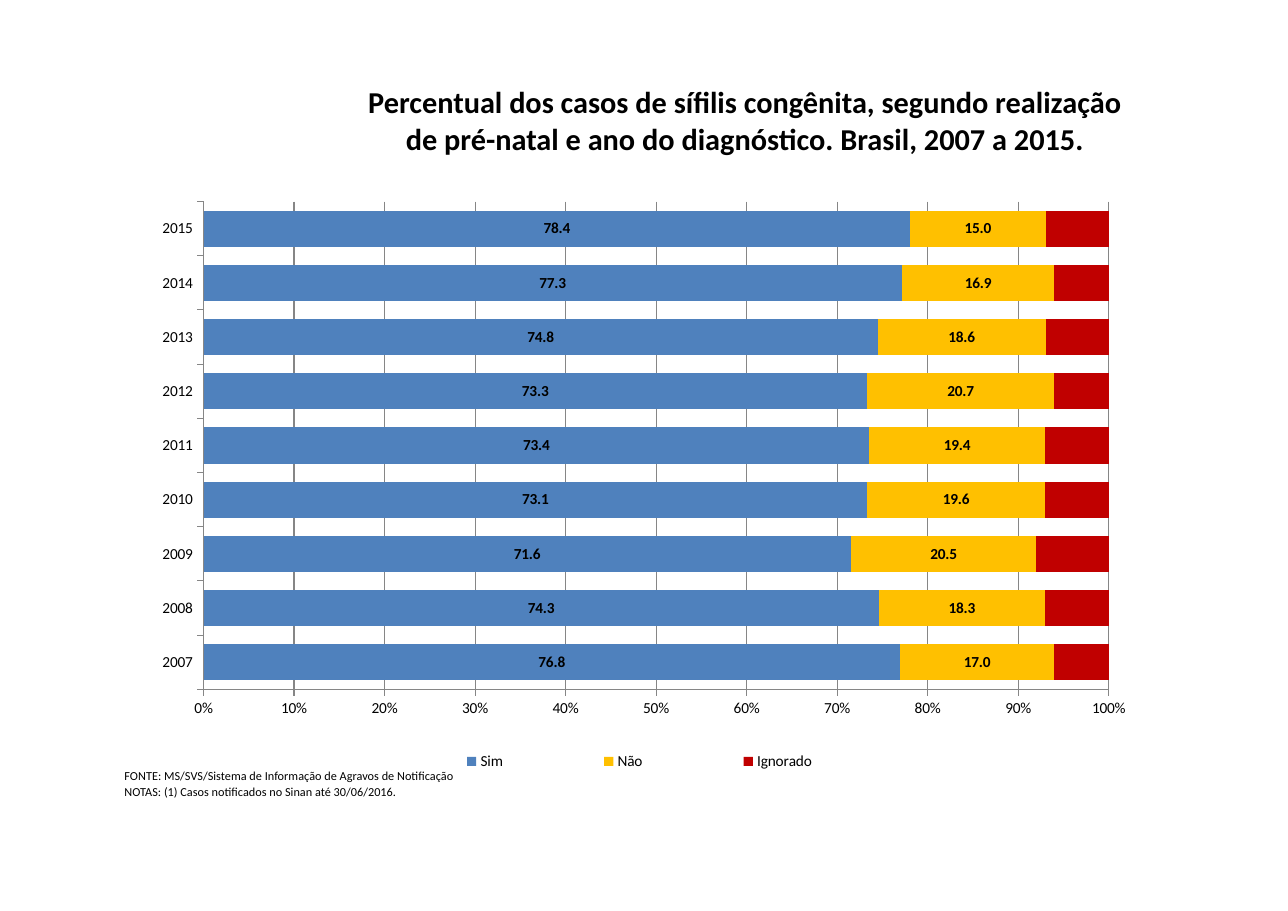
import dataclasses
import typing

import lxml.etree
import pptx
import pptx.chart.data
import pptx.dml.color
import pptx.enum.chart
import pptx.enum.text
import pptx.oxml.ns
import pptx.util

BLACK = pptx.dml.color.RGBColor(0x00, 0x00, 0x00)
GREY = pptx.dml.color.RGBColor(0x86, 0x86, 0x86)
BLUE = pptx.dml.color.RGBColor(0x4F, 0x81, 0xBD)
AMBER = pptx.dml.color.RGBColor(0xFF, 0xC0, 0x00)
RED = pptx.dml.color.RGBColor(0xC0, 0x00, 0x00)

Inches = pptx.util.Inches
qn = pptx.oxml.ns.qn

TITLE = ("Percentual dos casos de sífilis congênita, segundo realização "
         "de pré-natal e ano do diagnóstico. Brasil, 2007 a 2015.")
FOOTNOTES = (
    "FONTE: MS/SVS/Sistema de Informação de Agravos de Notificação",
    "NOTAS: (1) Casos notificados no Sinan até 30/06/2016.",
)
YEARS = [str(year) for year in range(2007, 2016)]


@dataclasses.dataclass(frozen=True)
class PrenatalAnswer:
    name: str
    percentages: tuple[float, ...]
    color: pptx.dml.color.RGBColor
    labelled: bool = True


ANSWERS = (
    PrenatalAnswer("Sim", (76.8, 74.3, 71.6, 73.1, 73.4, 73.3, 74.8, 77.3, 78.4), BLUE),
    PrenatalAnswer("Não", (17, 18.3, 20.5, 19.6, 19.4, 20.7, 18.6, 16.9, 15), AMBER),
    PrenatalAnswer("Ignorado", (6, 7, 8, 7, 7, 6, 7, 6, 7), RED, labelled=False),
)


def apply_format(target: typing.Any, values: dict[str, typing.Any]) -> None:
    for attribute, value in values.items():
        setattr(target, attribute, value)


def style_font(font: typing.Any, size: float, bold: bool = False) -> None:
    apply_format(font, {"name": "Calibri", "size": pptx.util.Pt(size), "bold": bold})
    font.color.rgb = BLACK


def manual_layout(target: str, x: float, y: float, w: float, h: float) -> typing.Any:
    layout = lxml.etree.Element(qn("c:layout"))
    manual = lxml.etree.SubElement(layout, qn("c:manualLayout"))
    settings = {"layoutTarget": target} if target else {}
    settings |= {"xMode": "edge", "yMode": "edge", "x": x, "y": y, "w": w, "h": h}
    for tag, value in settings.items():
        lxml.etree.SubElement(manual, qn(f"c:{tag}")).set("val", str(value))
    return layout


def style_axes(chart: typing.Any) -> None:
    for axis in (chart.category_axis, chart.value_axis):
        axis.major_tick_mark = pptx.enum.chart.XL_TICK_MARK.OUTSIDE
        axis.format.line.color.rgb = GREY
    chart.category_axis.has_major_gridlines = False
    percent_axis = chart.value_axis
    percent_axis.has_major_gridlines = True
    percent_axis.major_gridlines.format.line.color.rgb = GREY
    apply_format(percent_axis.tick_labels,
                 {"number_format": "0%", "number_format_is_linked": False})


def style_answer(series: typing.Any, answer: PrenatalAnswer) -> None:
    series.format.fill.solid()
    series.format.fill.fore_color.rgb = answer.color
    if answer.labelled:
        labels = series.data_labels
        apply_format(labels, {"show_value": True, "number_format": "0.0",
                              "number_format_is_linked": False})
        style_font(labels.font, 10, bold=True)


def add_prenatal_chart(slide: typing.Any) -> None:
    data = pptx.chart.data.CategoryChartData(number_format="0.0")
    data.categories = YEARS
    for answer in ANSWERS:
        data.add_series(answer.name, answer.percentages)
    chart = slide.shapes.add_chart(
        pptx.enum.chart.XL_CHART_TYPE.BAR_STACKED_100,
        Inches(1.25), Inches(1.44), Inches(9.2), Inches(5.73), data).chart
    apply_format(chart, {"has_title": False, "has_legend": True})
    style_font(chart.font, 10)
    style_axes(chart)

    bars = chart.plots[0]
    apply_format(bars, {"gap_width": 50, "overlap": 100, "vary_by_categories": False})
    for series, answer in zip(bars.series, ANSWERS):
        style_answer(series, answer)

    legend = chart.legend
    apply_format(legend, {"position": pptx.enum.chart.XL_LEGEND_POSITION.BOTTOM,
                          "include_in_layout": False})
    style_font(legend.font, 10)
    legend_element = chart.element.find(".//" + qn("c:legend"))
    plot_element = chart.element.find(".//" + qn("c:plotArea"))
    for element in (legend_element, plot_element):
        for automatic in element.findall(qn("c:layout")):
            element.remove(automatic)
    plot_element.insert(0, manual_layout("inner", 0.065, 0.068, 0.893, 0.773))
    legend_element.find(qn("c:legendPos")).addnext(
        manual_layout("", 0.23, 0.93, 0.53, 0.05))


def add_title(slide: typing.Any) -> None:
    frame = slide.shapes.add_textbox(
        Inches(3.07), Inches(0.71), Inches(7.38), Inches(0.77)).text_frame
    apply_format(frame, {"word_wrap": True,
                         "auto_size": pptx.enum.text.MSO_AUTO_SIZE.SHAPE_TO_FIT_TEXT})
    paragraph = frame.paragraphs[0]
    apply_format(paragraph, {"text": TITLE, "alignment": pptx.enum.text.PP_ALIGN.CENTER})
    style_font(paragraph.runs[0].font, 19.8, bold=True)


def add_footnotes(slide: typing.Any) -> None:
    table = slide.shapes.add_table(
        2, 2, Inches(1.12), Inches(6.97), Inches(3.91), Inches(0.29)).table
    apply_format(table, {"first_row": False, "horz_banding": False})
    for column, width in zip(table.columns, (3.01, 0.9)):
        column.width = Inches(width)
    for row, height in zip(table.rows, (0.14, 0.15)):
        row.height = Inches(height)
    margin = Inches(0.01)
    for cell in table.iter_cells():
        apply_format(cell, {"margin_left": margin, "margin_right": margin,
                            "margin_top": margin, "margin_bottom": 0,
                            "vertical_anchor": pptx.enum.text.MSO_ANCHOR.MIDDLE})
        cell.fill.background()
        style_font(cell.text_frame.paragraphs[0].font, 8)
    table.cell(0, 0).merge(table.cell(0, 1))
    for row_index, footnote in enumerate(FOOTNOTES):
        paragraph = table.cell(row_index, 0).text_frame.paragraphs[0]
        paragraph.text = footnote
        style_font(paragraph.runs[0].font, 8)


def main() -> None:
    presentation = pptx.Presentation()
    apply_format(presentation, {"slide_width": Inches(11.69), "slide_height": Inches(8.27)})
    slide = presentation.slides.add_slide(presentation.slide_layouts[6])
    add_prenatal_chart(slide)
    add_title(slide)
    add_footnotes(slide)
    presentation.save("out.pptx")


if __name__ == "__main__":
    main()
